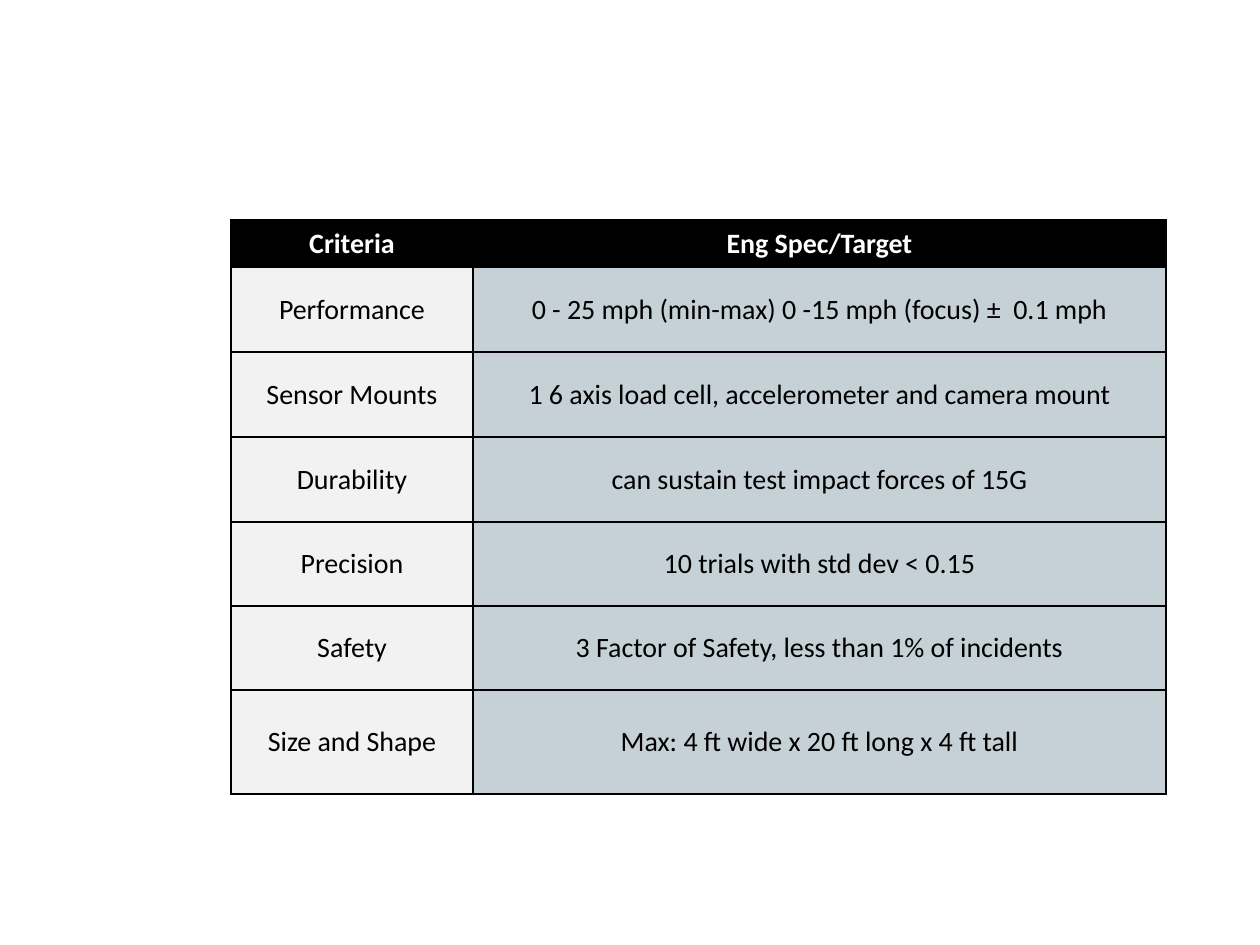
from lxml import etree
from pptx import Presentation
from pptx import util as u
from pptx.dml.color import RGBColor
from pptx.enum import text
from pptx.oxml.ns import qn

PX_PER_INCH = 126
BLACK, WHITE, GREY, BLUE_GREY = "000000", "FFFFFF", "F2F2F2", "C5D1D7"

CRITERIA = [
    ("Criteria", "Eng Spec/Target"),
    ("Performance", "0 - 25 mph (min-max) 0 -15 mph (focus) ±  0.1 mph"),
    ("Sensor Mounts", "1 6 axis load cell, accelerometer and camera mount"),
    ("Durability", "can sustain test impact forces of 15G"),
    ("Precision", "10 trials with std dev < 0.15"),
    ("Safety", "3 Factor of Safety, less than 1% of incidents"),
    ("Size and Shape", "Max: 4 ft wide x 20 ft long x 4 ft tall"),
]
COLUMN_WIDTHS = [242, 693]
ROW_HEIGHTS = [47, 85, 85, 85, 84, 84, 104]


def px(length):
    return u.Emu(round(length * 914400 / PX_PER_INCH))


def color(hex_value):
    return RGBColor.from_string(hex_value)


def add_borders(cell, hex_value, width):
    properties = cell._tc.get_or_add_tcPr()
    for side in ("a:lnL", "a:lnR", "a:lnT", "a:lnB"):
        line = etree.SubElement(properties, qn(side), w=str(u.Pt(width)))
        fill = etree.SubElement(line, qn("a:solidFill"))
        etree.SubElement(fill, qn("a:srgbClr"), val=hex_value)


def style_cell(cell, label, fill, ink, bold):
    add_borders(cell, BLACK, 1)  # borders come before the fill in the XML
    cell.fill.solid()
    cell.fill.fore_color.rgb = color(fill)
    cell.vertical_anchor = text.MSO_ANCHOR.MIDDLE
    cell.text = label
    paragraph = cell.text_frame.paragraphs[0]
    paragraph.alignment = text.PP_ALIGN.CENTER
    font = paragraph.font
    font.name, font.size, font.bold = "Calibri", u.Pt(16), bold
    font.color.rgb = color(ink)


def add_criteria_table(slide, left, top):
    frame = slide.shapes.add_table(
        len(CRITERIA), len(COLUMN_WIDTHS), px(left), px(top),
        px(sum(COLUMN_WIDTHS)), px(sum(ROW_HEIGHTS)))
    table = frame.table
    table.horz_banding = False
    for column, width in zip(table.columns, COLUMN_WIDTHS):
        column.width = px(width)
    for row_index, (row, height) in enumerate(zip(table.rows, ROW_HEIGHTS)):
        row.height = px(height)
        header = row_index == 0
        fills = (BLACK, BLACK) if header else (GREY, BLUE_GREY)
        for cell, label, fill in zip(row.cells, CRITERIA[row_index], fills):
            style_cell(cell, label, fill, WHITE if header else BLACK, header)


def main():
    deck = Presentation()
    deck.slide_width, deck.slide_height = px(1260), px(945)
    slide = deck.slides.add_slide(deck.slide_layouts[6])  # blank layout
    add_criteria_table(slide, left=231, top=220)
    deck.save("out.pptx")


if __name__ == "__main__":
    main()
